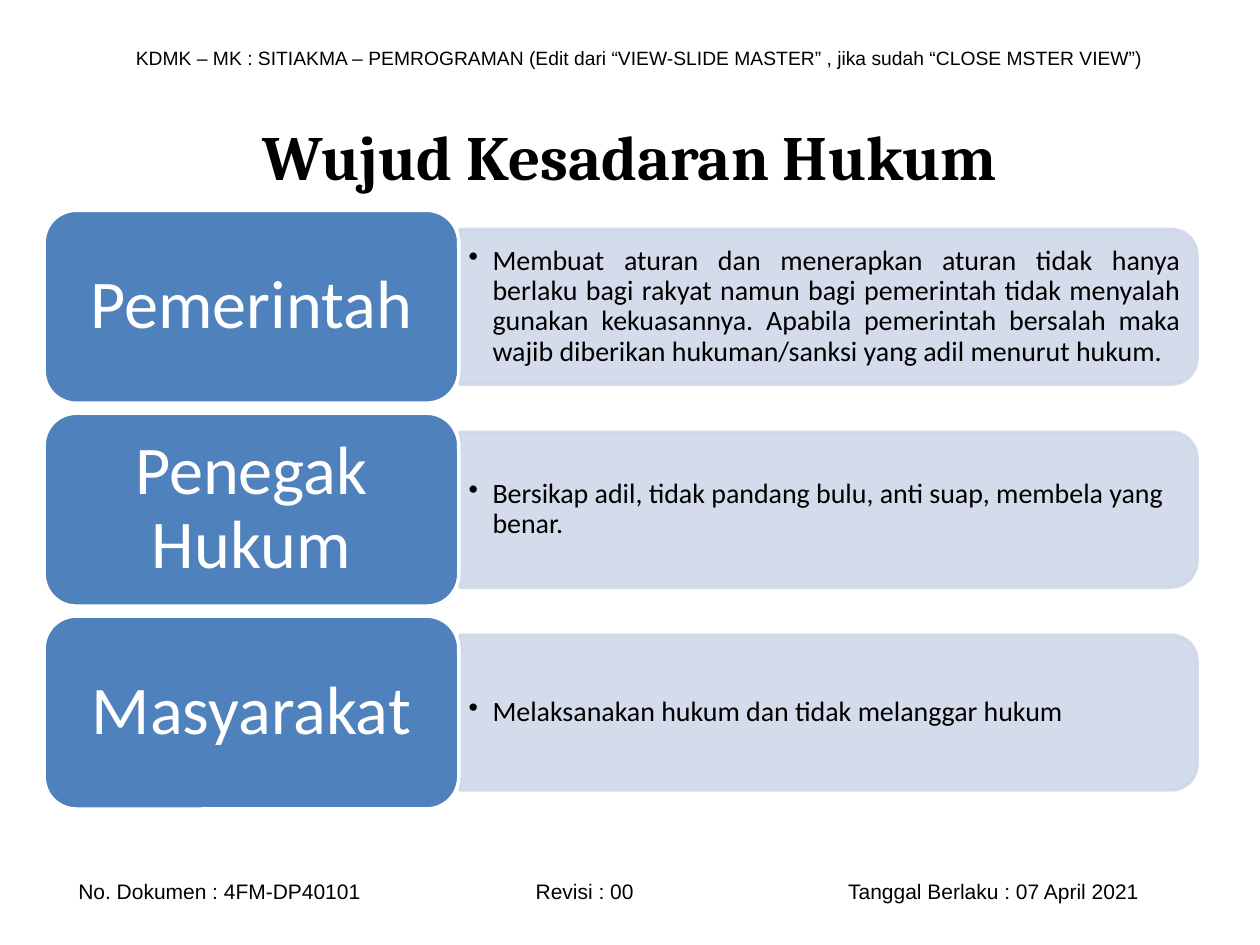
from lxml import etree
from pptx import Presentation
from pptx import util as u
from pptx.dml.color import RGBColor
from pptx.enum import shapes, text
from pptx.oxml import ns

COLORS = {"text": "000000", "label": "4F81BD", "panel": "D0D8E8", "white": "FFFFFF"}
ALIGN = text.PP_ALIGN


def format_text(tf, font, size, color, align, margins=(0.25, 0.13)):
    tf.word_wrap = True
    tf.vertical_anchor = text.MSO_ANCHOR.MIDDLE
    tf.margin_left = tf.margin_right = u.Cm(margins[0])
    tf.margin_top = tf.margin_bottom = u.Cm(margins[1])
    p = tf.paragraphs[0]
    p.alignment = align
    for r in p.runs:
        r.font.name, r.font.size = font, u.Pt(size)
        r.font.color.rgb = RGBColor.from_string(COLORS[color])
    return p


def format_shape(s, fill, line):
    s.shadow.inherit = False
    s.fill.solid()
    s.fill.fore_color.rgb = RGBColor.from_string(COLORS[fill])
    s.line.color.rgb = RGBColor.from_string(COLORS[line])
    s.line.width = u.Pt(2)


prs = Presentation()
prs.slide_width, prs.slide_height = u.Cm(25.4), u.Cm(19.05)
slide = prs.slides.add_slide(prs.slide_layouts[5])

# Header
s = slide.shapes.add_textbox(u.Cm(2.49), u.Cm(0.79), u.Cm(21.21), u.Cm(0.74))
s.text_frame.text = ("KDMK – MK : SITIAKMA – PEMROGRAMAN (Edit dari “VIEW-SLIDE MASTER” , "
                     "jika sudah “CLOSE MSTER VIEW”)")
format_text(s.text_frame, "Arial", 11, "text", ALIGN.LEFT)

# Footer with three tabbed parts
s = slide.shapes.add_textbox(u.Cm(0.51), u.Cm(17.58), u.Cm(24), u.Cm(0.76))
s.text_frame.text = "No. Dokumen : 4FM-DP40101\tRevisi : 00\tTanggal Berlaku : 07 April 2021"
p = format_text(s.text_frame, "Arial", 12, "text", ALIGN.LEFT)
s.text_frame.margin_left = u.Cm(1.07)
tabs = etree.SubElement(p._p.get_or_add_pPr(), ns.qn("a:tabLst"))
for pos in (9.22, 15.52):
    etree.SubElement(tabs, ns.qn("a:tab"), pos=str(u.Cm(pos)), algn="l")

# Title
s = slide.shapes.title
s.left, s.top, s.width, s.height = u.Cm(1.27), u.Cm(1.55), u.Cm(22.86), u.Cm(3.18)
s.text_frame.text = "Wujud Kesadaran Hukum"
p = format_text(s.text_frame, "Cambria", 36, "text", ALIGN.CENTER)
p.runs[0].font.bold = True

# Rows: a label on the left and a panel with a bullet on the right
rows = [
    ("Pemerintah",
     "Membuat aturan dan menerapkan aturan tidak hanya berlaku bagi rakyat namun bagi "
     "pemerintah tidak menyalah gunakan kekuasannya. Apabila pemerintah bersalah maka "
     "wajib diberikan hukuman/sanksi yang adil menurut hukum.", ALIGN.JUSTIFY),
    ("Penegak Hukum",
     "Bersikap adil, tidak pandang bulu, anti suap, membela yang benar.", ALIGN.LEFT),
    ("Masyarakat", "Melaksanakan hukum dan tidak melanggar hukum", ALIGN.LEFT),
]
row_top, row_height, row_pitch = 4.24, 3.89, 4.09
panel_center, panel_length, panel_height = 16.7, 14.86, 3.12
text_height = 2.82

for i, (label, detail, align) in enumerate(rows):
    top = row_top + i * row_pitch
    middle = top + row_height / 2

    # Panel, turned so that its rounded corners face right
    s = slide.shapes.add_shape(
        shapes.MSO_SHAPE.ROUND_2_SAME_RECTANGLE,
        u.Cm(panel_center - panel_height / 2), u.Cm(middle - panel_length / 2),
        u.Cm(panel_height), u.Cm(panel_length))
    s.rotation = 90
    format_shape(s, "panel", "panel")
    for color in s._element.spPr.iter(ns.qn("a:srgbClr")):
        etree.SubElement(color, ns.qn("a:alpha"), val="90000")

    # Bullet text
    s = slide.shapes.add_textbox(u.Cm(9.27), u.Cm(middle - text_height / 2),
                                 u.Cm(14.71), u.Cm(text_height))
    s.text_frame.text = detail
    p = format_text(s.text_frame, "Calibri", 16, "text", align, (0.18, 0.08))
    p.line_spacing = 0.9
    pPr = p._p.get_or_add_pPr()
    pPr.set("marL", str(u.Cm(0.48)))
    pPr.set("indent", str(-u.Cm(0.48)))
    etree.SubElement(pPr, ns.qn("a:buChar"), char="•")

    # Label
    s = slide.shapes.add_shape(shapes.MSO_SHAPE.ROUNDED_RECTANGLE,
                               u.Cm(0.89), u.Cm(top), u.Cm(8.36), u.Cm(row_height))
    format_shape(s, "label", "white")
    s.text_frame.text = label
    p = format_text(s.text_frame, "Calibri", 39, "white", ALIGN.CENTER, (0.4, 0.2))
    p.line_spacing = 0.9

prs.save("out.pptx")
